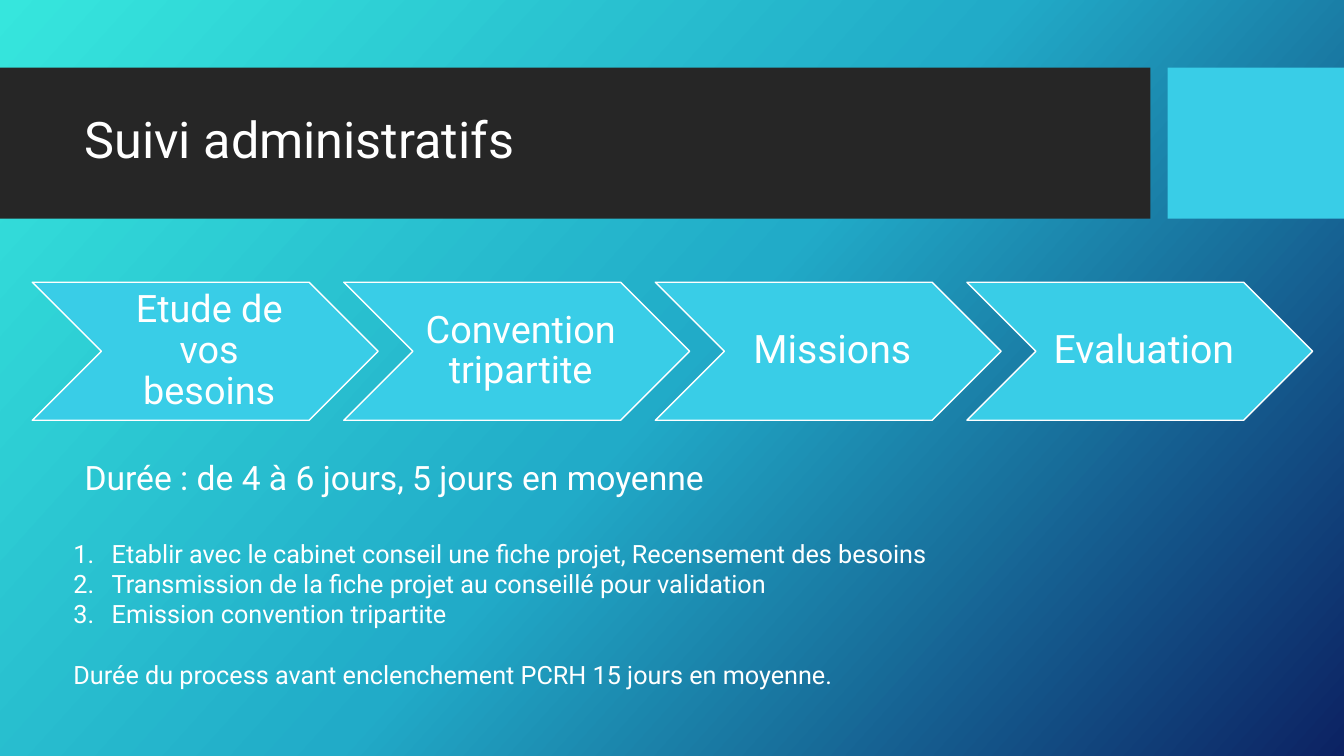
from copy import deepcopy

from lxml.etree import SubElement
from pptx import Presentation
from pptx.dml.color import RGBColor
from pptx.enum.shapes import MSO_SHAPE as Shape
from pptx.enum.text import MSO_ANCHOR as Anchor, PP_ALIGN as Align
from pptx.oxml.ns import qn
from pptx.util import Inches, Pt

WIDTH, HEIGHT = 13.33, 7.5
FONT = "Roboto"
COLORS = {"white": "FFFFFF", "band": "262626", "accent": "39CDE7"}
GRADIENT = [(0, "36E6DD"), (0.5, "21ABC8"), (1, "0C2263")]

# Process row: chevrons at an equal pitch
STEPS = [("Etude de vos besoins", 27), ("Convention tripartite", 27),
         ("Missions", 28), ("Evaluation", 28)]
STEP_LEFT, STEP_TOP, STEP_PITCH = 0.32, 2.8, 3.09
STEP_WIDTH, STEP_HEIGHT = 3.43, 1.37

TASKS = ["Etablir avec le cabinet conseil une fiche projet, Recensement des besoins",
         "Transmission de la fiche projet au conseillé pour validation",
         "Emission convention tripartite"]
CLOSING = "Durée du process avant enclenchement PCRH 15 jours en moyenne."


def color(name):
    return RGBColor.from_string(COLORS[name])


def paint_background(slide):
    fill = slide.background.fill
    fill.gradient()
    fill.gradient_angle = 360 - 42  # measured counter-clockwise
    stop_list = slide.element.find(".//" + qn("a:gsLst"))
    stop_list.insert(1, deepcopy(stop_list[0]))
    for stop, (position, value) in zip(fill.gradient_stops, GRADIENT):
        stop.position = position
        stop.color.rgb = RGBColor.from_string(value)


def add_block(slide, kind, box, fill, line=None):
    shape = slide.shapes.add_shape(kind, *map(Inches, box))
    shape.shadow.inherit = False
    shape.fill.solid()
    shape.fill.fore_color.rgb = color(fill)
    if line:
        shape.line.color.rgb = color(line)
        shape.line.width = Pt(1)
    else:
        shape.line.fill.background()
    return shape


def format_paragraph(paragraph, size, align=Align.LEFT, spacing=None):
    paragraph.alignment = align
    paragraph.line_spacing = spacing
    paragraph.font.name = FONT
    paragraph.font.size = Pt(size)
    paragraph.font.color.rgb = color("white")


def add_step(slide, index, text, size):
    box = (STEP_LEFT + index * STEP_PITCH, STEP_TOP, STEP_WIDTH, STEP_HEIGHT)
    text_frame = add_block(slide, Shape.CHEVRON, box, "accent", "white").text_frame
    text_frame.margin_left = Inches(0.12)
    text_frame.margin_top = text_frame.margin_right = text_frame.margin_bottom = Inches(0.04)
    text_frame.vertical_anchor = Anchor.MIDDLE
    text_frame.word_wrap = True
    text_frame.text = text
    format_paragraph(text_frame.paragraphs[0], size, Align.CENTER, 0.9)


def add_text(slide, box, lines, size, anchor=Anchor.TOP, spacing=None):
    text_frame = slide.shapes.add_textbox(*map(Inches, box)).text_frame
    text_frame.word_wrap = True
    text_frame.vertical_anchor = anchor
    text_frame.text = "\n".join(lines)
    for paragraph in text_frame.paragraphs:
        format_paragraph(paragraph, size, spacing=spacing)
    return text_frame.paragraphs


def number_paragraph(paragraph):
    properties = paragraph._p.get_or_add_pPr()
    properties.set("marL", str(Inches(0.38)))
    properties.set("indent", str(-Inches(0.38)))
    numbering = SubElement(properties, qn("a:buAutoNum"), type="arabicPeriod")
    properties.find(qn("a:defRPr")).addprevious(numbering)


def main():
    presentation = Presentation()
    presentation.slide_width, presentation.slide_height = Inches(WIDTH), Inches(HEIGHT)
    slide = presentation.slides.add_slide(presentation.slide_layouts[6])
    paint_background(slide)

    # Title band
    add_block(slide, Shape.RECTANGLE, (0, 0.67, 11.41, 1.5), "band")
    add_block(slide, Shape.RECTANGLE, (11.58, 0.67, WIDTH - 11.58, 1.5), "accent")
    add_text(slide, (0.74, 0.82, 10.51, 1.18), ["Suivi administratifs"], 36, Anchor.MIDDLE, 0.9)

    # Process steps
    for index, (text, size) in enumerate(STEPS):
        add_step(slide, index, text, size)

    # Duration and numbered tasks
    add_text(slide, (0.74, 4.48, 9.09, 0.81), ["Durée : de 4 à 6 jours, 5 jours en moyenne"], 24)
    *tasks, closing = add_text(slide, (0.63, 5.29, 12.08, 1.62), TASKS + [CLOSING], 18)
    for paragraph in tasks:
        number_paragraph(paragraph)
    closing.space_before = Pt(21.5)

    presentation.save("out.pptx")


if __name__ == "__main__":
    main()
